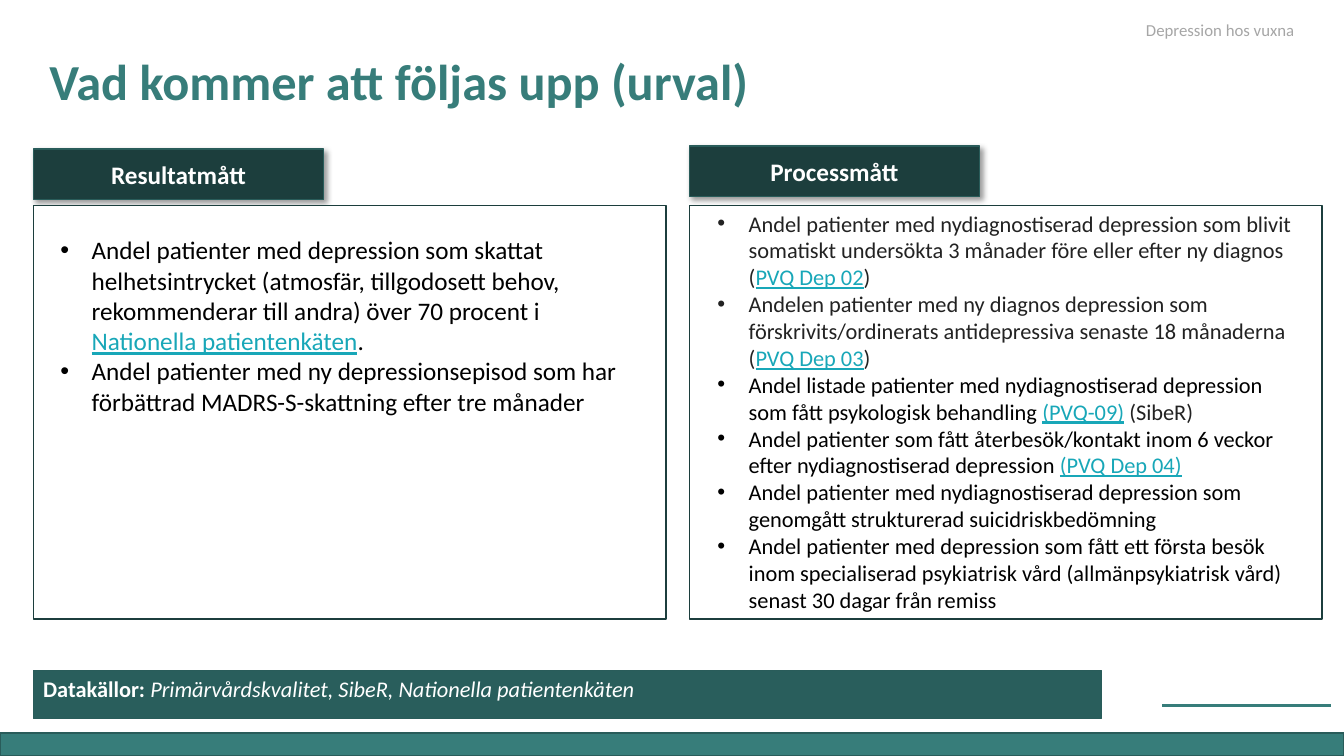
from lxml import etree
from pptx import Presentation
from pptx.dml.color import RGBColor
from pptx.enum.shapes import MSO_CONNECTOR, MSO_SHAPE
from pptx.enum.text import MSO_ANCHOR, MSO_AUTO_SIZE, PP_ALIGN
from pptx.oxml.ns import qn
from pptx.util import Cm, Pt

RECTANGLE = MSO_SHAPE.RECTANGLE
STRAIGHT = MSO_CONNECTOR.STRAIGHT
TOP, MIDDLE, BOTTOM = MSO_ANCHOR.TOP, MSO_ANCHOR.MIDDLE, MSO_ANCHOR.BOTTOM
LEFT, CENTER = PP_ALIGN.LEFT, PP_ALIGN.CENTER
NO_AUTOFIT = MSO_AUTO_SIZE.NONE

FONT = "Calibri"
WHITE = RGBColor(0xFF, 0xFF, 0xFF)
BLACK = RGBColor(0x00, 0x00, 0x00)
CHARCOAL = RGBColor(0x22, 0x22, 0x22)
GREY = RGBColor(0xA6, 0xA6, 0xA6)
TEAL = RGBColor(0x37, 0x7D, 0x7A)
TEAL_EDGE = RGBColor(0x29, 0x5C, 0x5A)
TEAL_BAND = RGBColor(0x29, 0x5E, 0x5C)
TEAL_DARK = RGBColor(0x1C, 0x3E, 0x3D)
LINK = RGBColor(0x18, 0xA7, 0xB8)

# Each paragraph is a list of (text, colour) runs
RESULT_MEASURES = [
    [("Andel patienter med depression som skattat helhetsintrycket (atmosfär, "
      "tillgodosett behov, rekommenderar till andra) över 70 procent i ", BLACK),
     ("Nationella patientenkäten", LINK), (".", BLACK)],
    [("Andel patienter med ny depressionsepisod som har förbättrad "
      "MADRS-S-skattning efter tre månader", BLACK)],
]
PROCESS_MEASURES = [
    [("Andel patienter med nydiagnostiserad depression som blivit somatiskt "
      "undersökta 3 månader före eller efter ny diagnos (", CHARCOAL),
     ("PVQ Dep 02", LINK), (")", CHARCOAL)],
    [("Andelen patienter med ny diagnos depression som förskrivits/ordinerats "
      "antidepressiva senaste 18 månaderna (", CHARCOAL),
     ("PVQ Dep 03", LINK), (")", CHARCOAL)],
    [("Andel listade patienter med nydiagnostiserad depression som fått "
      "psykologisk behandling ", BLACK),
     ("(PVQ-09)", LINK), (" (SibeR)", CHARCOAL)],
    [("Andel patienter som fått återbesök/kontakt inom 6 veckor efter "
      "nydiagnostiserad depression ", BLACK), ("(PVQ Dep 04)", LINK)],
    [("Andel patienter med nydiagnostiserad depression som genomgått "
      "strukturerad suicidriskbedömning", BLACK)],
    [("Andel patienter med depression som fått ett första besök inom "
      "specialiserad psykiatrisk vård (allmänpsykiatrisk vård) senast 30 dagar "
      "från remiss", BLACK)],
]


def add_run(paragraph, text, size, color, bold=False, italic=False):
    run = paragraph.add_run()
    run.text = text
    font = run.font
    font.name, font.size, font.bold, font.italic = FONT, Pt(size), bold, italic
    font.color.rgb = color
    if color == LINK:
        font.underline = True


def add_rectangle(slide, left, top, width, height, fill, edge):
    shape = slide.shapes.add_shape(
        RECTANGLE, Cm(left), Cm(top), Cm(width), Cm(height))
    shape.shadow.inherit = False
    shape.fill.solid()
    shape.fill.fore_color.rgb = fill
    shape.line.color.rgb = edge
    shape.line.width = Pt(1)
    return shape


def add_drop_shadow(shape):
    effects = shape.element.spPr.find(qn("a:effectLst"))
    shadow = etree.SubElement(
        effects, qn("a:outerShdw"), blurRad=str(Pt(4)), dist=str(Pt(3)),
        dir="2700000", algn="tl", rotWithShape="0")
    color = etree.SubElement(shadow, qn("a:srgbClr"), val="000000")
    etree.SubElement(color, qn("a:alpha"), val="40000")


def add_heading_tab(slide, left, top, text):
    tab = add_rectangle(slide, left, top, 7.32, 1.27, TEAL_DARK, TEAL_EDGE)
    add_drop_shadow(tab)
    tab.text_frame.vertical_anchor = MIDDLE
    paragraph = tab.text_frame.paragraphs[0]
    paragraph.alignment = CENTER
    add_run(paragraph, text, 18, WHITE, bold=True)


def add_text_frame(slide, left, top, width, height):
    box = slide.shapes.add_textbox(Cm(left), Cm(top), Cm(width), Cm(height))
    box.text_frame.word_wrap = True
    return box.text_frame


def add_bullet(paragraph):
    properties = paragraph._p.get_or_add_pPr()
    properties.set("marL", str(Cm(0.79)))
    properties.set("indent", str(-Cm(0.79)))
    etree.SubElement(properties, qn("a:buFont"), typeface="Arial")
    etree.SubElement(properties, qn("a:buChar"), char="•")


def add_bullet_list(slide, left, top, height, items, size):
    frame = add_text_frame(slide, left, top, 15.04, height)
    for index, runs in enumerate(items):
        paragraph = frame.add_paragraph() if index else frame.paragraphs[0]
        add_bullet(paragraph)
        for text, color in runs:
            add_run(paragraph, text, size, color)


def format_title(title, text):
    title.left, title.top = Cm(0.99), Cm(1.24)
    title.width, title.height = Cm(25.4), Cm(1.7)
    frame = title.text_frame
    frame.auto_size = NO_AUTOFIT
    frame.word_wrap = True
    frame.vertical_anchor = BOTTOM
    paragraph = frame.paragraphs[0]
    paragraph.alignment = LEFT
    paragraph.line_spacing = 0.9
    add_run(paragraph, text, 36, TEAL, bold=True)


def add_rule(slide, left, right, top):
    rule = slide.shapes.add_connector(
        STRAIGHT, Cm(left), Cm(top), Cm(right), Cm(top))
    rule.line.color.rgb = TEAL
    rule.line.width = Pt(2.5)
    etree.SubElement(rule.element.spPr, qn("a:effectLst"))


def add_source_band(slide):
    band = add_rectangle(slide, 0.84, 16.89, 26.92, 1.22, TEAL_BAND, TEAL_EDGE)
    band.text_frame.vertical_anchor = TOP
    paragraph = band.text_frame.paragraphs[0]
    paragraph.alignment = LEFT
    add_run(paragraph, "Datakällor: ", 16, WHITE, bold=True)
    add_run(paragraph, "Primärvårdskvalitet, SibeR, Nationella patientenkäten",
            16, WHITE, italic=True)


def main():
    presentation = Presentation()
    presentation.slide_width = Cm(33.87)
    presentation.slide_height = Cm(19.05)
    slide = presentation.slides.add_slide(presentation.slide_layouts[5])

    # Footer bar and sender rule
    add_rectangle(slide, 0, 18.47, 33.87, 0.58, TEAL, TEAL_EDGE)
    add_rule(slide, 29.29, 33.53, 17.78)

    # Title and topic
    format_title(slide.shapes.title, "Vad kommer att följas upp (urval)")
    topic = add_text_frame(slide, 28.63, 0.38, 4.32, 0.76)
    add_run(topic.paragraphs[0], "Depression hos vuxna", 12, GREY)

    # Two columns: heading tab and frame
    for left, tab_top, heading in ((0.84, 3.76, "Resultatmått"),
                                   (17.37, 3.68, "Processmått")):
        add_heading_tab(slide, left, tab_top, heading)
        add_rectangle(slide, left, 5.18, 15.95, 10.42, WHITE, TEAL_DARK)

    # Measures
    add_bullet_list(slide, 1.27, 5.79, 4.88, RESULT_MEASURES, 18)
    add_bullet_list(slide, 17.83, 5.16, 10.52, PROCESS_MEASURES, 16)

    # Data sources
    add_source_band(slide)

    presentation.save("out.pptx")


if __name__ == "__main__":
    main()
